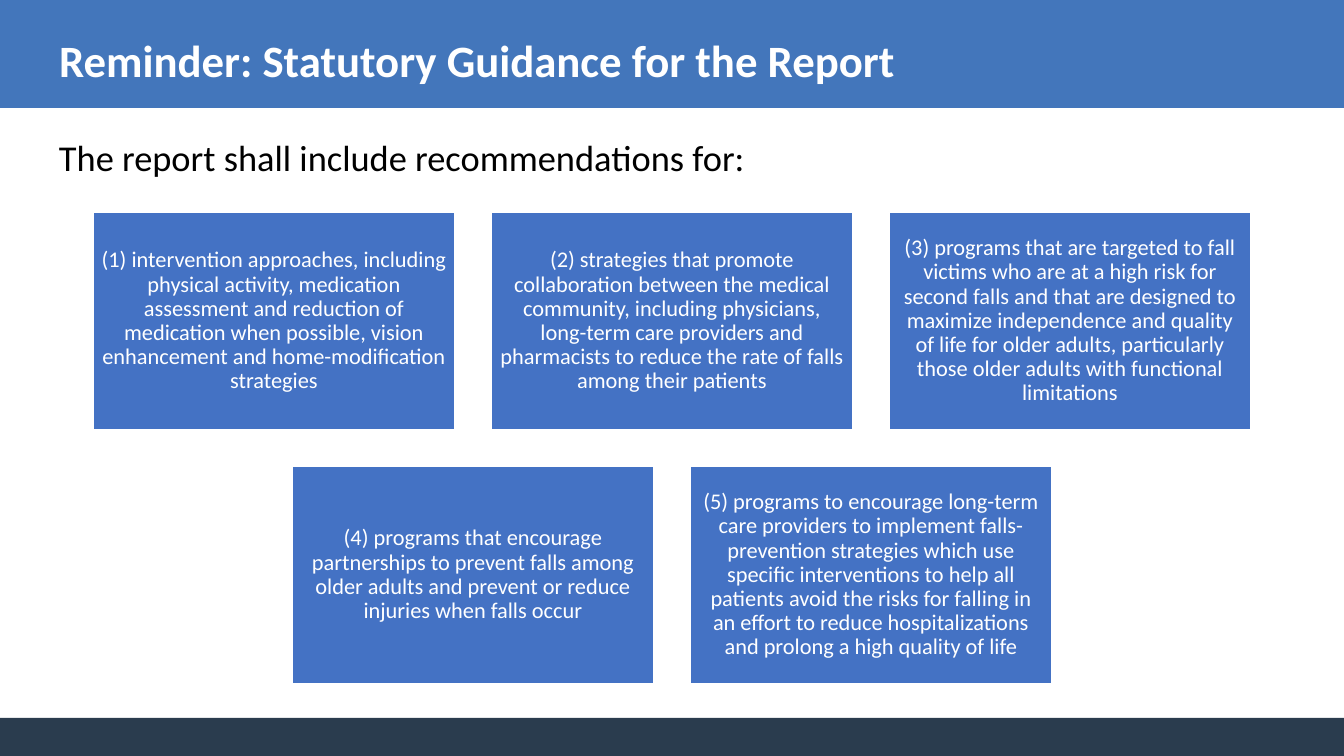
"""Build the slide on statutory guidance for the report."""
from pptx import Presentation
from pptx import util as u
from pptx.dml import color
from pptx.enum import shapes, text

PX = 914400 / 100.8
PAGE = (0, 0, 1344, 756)
WHITE = color.RGBColor(0xFF, 0xFF, 0xFF)
BLACK = color.RGBColor(0x00, 0x00, 0x00)
HEADER_BLUE = color.RGBColor(0x43, 0x76, 0xBB)
FOOTER_NAVY = color.RGBColor(0x2A, 0x3C, 0x4E)
CARD_BLUE = color.RGBColor(0x44, 0x72, 0xC4)

TITLE = "Reminder: Statutory Guidance for the Report"
LEAD = "The report shall include recommendations for:"
RECOMMENDATIONS = [
    "(1) intervention approaches, including physical activity, medication assessment "
    "and reduction of medication when possible, vision enhancement and "
    "home-modification strategies",
    "(2) strategies that promote collaboration between the medical community, "
    "including physicians, long-term care providers and pharmacists to reduce the "
    "rate of falls among their patients",
    "(3) programs that are targeted to fall victims who are at a high risk for second "
    "falls and that are designed to maximize independence and quality of life for "
    "older adults, particularly those older adults with functional limitations",
    "(4) programs that encourage partnerships to prevent falls among older adults and "
    "prevent or reduce injuries when falls occur",
    "(5) programs to encourage long-term care providers to implement falls- prevention "
    "strategies which use specific interventions to help all patients avoid the risks "
    "for falling in an effort to reduce hospitalizations and prolong a high quality "
    "of life",
]


def emu(*lengths):
    """Turn px lengths into EMU."""
    return [u.Emu(round(length * PX)) for length in lengths]


def add_panel(slide, box, fill):
    """Add a plain filled rectangle without a line."""
    panel = slide.shapes.add_shape(shapes.MSO_SHAPE.RECTANGLE, *emu(*box))
    panel.shadow.inherit = False
    panel.fill.solid()
    panel.fill.fore_color.rgb = fill
    panel.line.fill.background()
    return panel


def write(frame, wording, size, ink, align, bold=False):
    """Write one paragraph into a text frame and format it."""
    frame.word_wrap = True
    frame.auto_size = text.MSO_AUTO_SIZE.NONE
    para = frame.paragraphs[0]
    para.text = wording
    para.alignment = align
    para.font.name = "Calibri"
    para.font.size = u.Pt(size)
    para.font.bold = bold
    para.font.color.rgb = ink
    return para


def add_bands(slide, box):
    """Put the header and footer bands behind the title."""
    left, top, width, height = box
    footer = 38
    bands = [
        add_panel(slide, (left, top, width, 108), HEADER_BLUE),
        add_panel(slide, (left, top + height - footer, width, footer), FOOTER_NAVY),
    ]
    for band in bands:
        slide.shapes.title.element.addprevious(band.element)


def add_title(slide, box):
    """Place and fill the title placeholder."""
    title = slide.shapes.title
    title.left, title.top, title.width, title.height = emu(*box)
    write(title.text_frame, TITLE, 32, WHITE, text.PP_ALIGN.LEFT, bold=True)
    title.text_frame.vertical_anchor = text.MSO_ANCHOR.TOP


def add_lead(slide, box):
    """Add the sentence that introduces the cards."""
    lead = slide.shapes.add_textbox(*emu(*box))
    para = write(lead.text_frame, LEAD, 26, BLACK, text.PP_ALIGN.LEFT)
    para.space_after = u.Pt(6)


def add_card(slide, box, wording):
    """Add one recommendation card."""
    card = add_panel(slide, box, CARD_BLUE)
    card.line.color.rgb = WHITE
    card.line.width = u.Pt(1)
    frame = card.text_frame
    frame.margin_left, frame.margin_top, frame.margin_right, frame.margin_bottom = emu(7, 7, 7, 7)
    frame.vertical_anchor = text.MSO_ANCHOR.MIDDLE
    para = write(frame, wording, 16, WHITE, text.PP_ALIGN.CENTER)
    para.line_spacing = 0.9


def add_cards(slide, box, columns=3, gap=36):
    """Lay the cards out in rows, each row centred in the box."""
    left, top, width, height = box
    rows = [RECOMMENDATIONS[start:start + columns]
            for start in range(0, len(RECOMMENDATIONS), columns)]
    card_width = (width - gap * (columns - 1)) // columns
    card_height = (height - gap * (len(rows) - 1)) // len(rows)
    for row, wordings in enumerate(rows):
        row_width = len(wordings) * (card_width + gap) - gap
        row_left = left + (width - row_width) // 2
        card_top = top + row * (card_height + gap)
        for column, wording in enumerate(wordings):
            card_left = row_left + column * (card_width + gap)
            add_card(slide, (card_left, card_top, card_width, card_height), wording)


def main():
    """Build and save the deck."""
    deck = Presentation()
    deck.slide_width, deck.slide_height = emu(*PAGE[2:])
    slide = deck.slides.add_slide(deck.slide_layouts.get_by_name("Title Only"))
    add_bands(slide, PAGE)
    add_title(slide, (49, 28, 1183, 65))
    add_lead(slide, (49, 130, 1210, 62))
    add_cards(slide, (93, 212, 1158, 472))
    deck.save("out.pptx")


if __name__ == "__main__":
    main()
